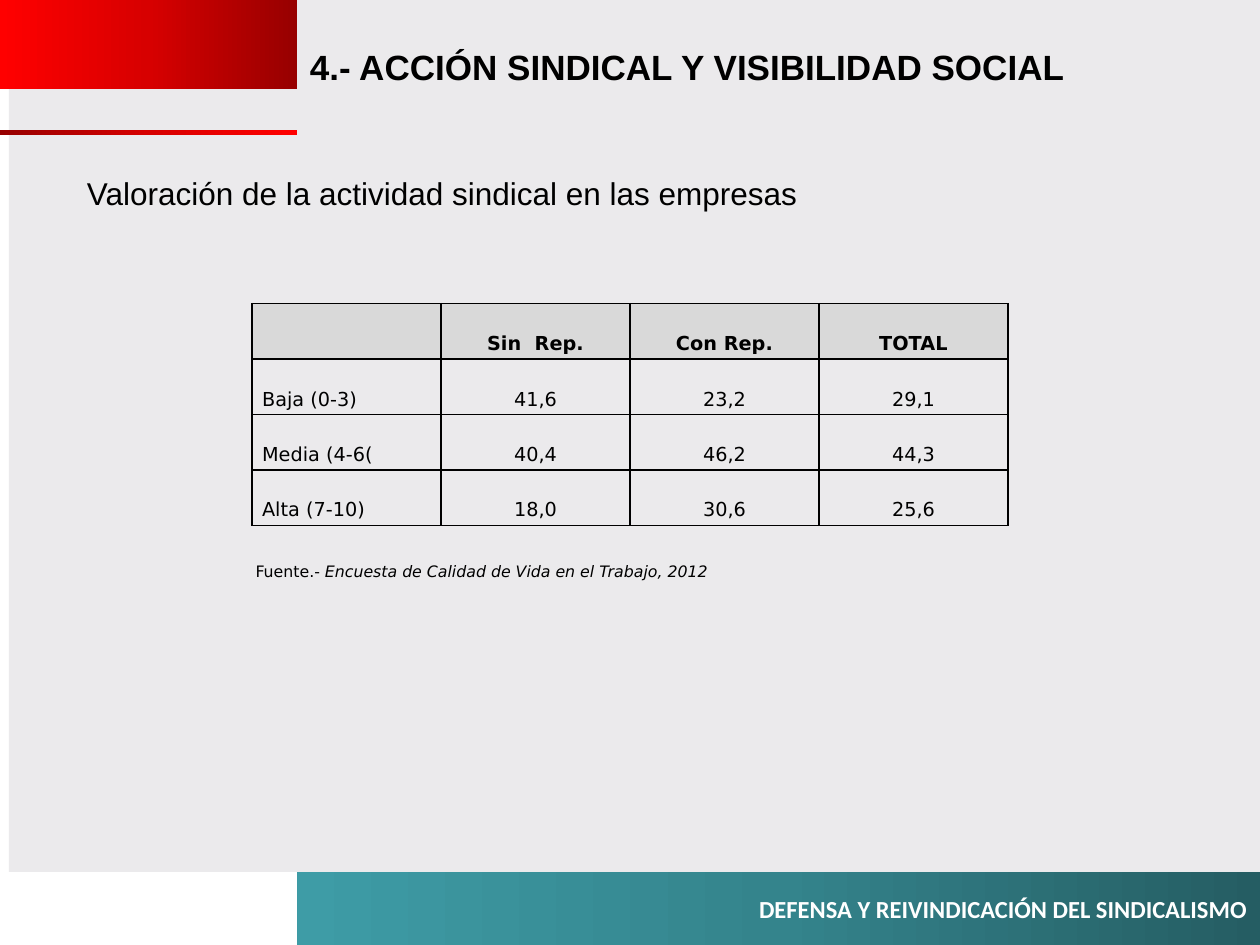
from copy import deepcopy

from lxml import etree
from pptx import Presentation
from pptx.dml.color import RGBColor
from pptx.enum import shapes, text
from pptx.oxml import ns
from pptx.util import Inches, Pt

BLACK = RGBColor(0x00, 0x00, 0x00)
WHITE = RGBColor(0xFF, 0xFF, 0xFF)
PANEL = RGBColor(0xEB, 0xEA, 0xEC)
HEADER = RGBColor(0xD9, 0xD9, 0xD9)
REDS = [RGBColor(0x97, 0x00, 0x00), RGBColor(0xD7, 0x00, 0x00), RGBColor(0xFF, 0x00, 0x00)]
TEALS = [RGBColor(0x25, 0x5D, 0x63), RGBColor(0x34, 0x84, 0x8C), RGBColor(0x3E, 0x9C, 0xA6)]

TITLE = "4.- ACCIÓN SINDICAL Y VISIBILIDAD SOCIAL"
SUBTITLE = "Valoración de la actividad sindical en las empresas"
FOOTER = "DEFENSA Y REIVINDICACIÓN DEL SINDICALISMO"
SOURCE = [("Fuente.- ", False), ("Encuesta de Calidad de Vida en el Trabajo, 2012", True)]
RATINGS = [
    ("", "Sin  Rep.", "Con Rep.", "TOTAL"),
    ("Baja (0-3)", "41,6", "23,2", "29,1"),
    ("Media (4-6(", "40,4", "46,2", "44,3"),
    ("Alta (7-10)", "18,0", "30,6", "25,6"),
]

SLIDE_WIDTH, SLIDE_HEIGHT = 10, 7.5
BAND_WIDTH = 2.36
FOOTER_TOP = 6.92
COLUMN_WIDTH, ROW_HEIGHT = 1.5, 0.44


def place(shape, left, top, width, height):
    shape.left, shape.top = Inches(left), Inches(top)
    shape.width, shape.height = Inches(width), Inches(height)


def style(font, name, size, color=BLACK, bold=False, italic=False):
    font.name, font.size, font.bold, font.italic = name, Pt(size), bold, italic
    font.color.rgb = color


def add_rectangle(slide, left, top, width, height):
    shape = slide.shapes.add_shape(
        shapes.MSO_SHAPE.RECTANGLE, Inches(left), Inches(top), Inches(width), Inches(height))
    shape.shadow.inherit = False
    shape.line.fill.background()
    return shape


def fill_gradient(shape, colors, angle):
    """Spread the colours evenly, adding the third stop to the default two."""
    shape.fill.gradient()
    shape.fill.gradient_angle = angle
    stop_list = shape.element.spPr.find(".//" + ns.qn("a:gsLst"))
    stop_list.append(deepcopy(stop_list[-1]))
    for index, (stop, color) in enumerate(zip(shape.fill.gradient_stops, colors)):
        stop.position = index / (len(colors) - 1)
        stop.color.rgb = color


def fill_placeholder(shape, words, size, bold=False):
    frame = shape.text_frame
    frame.text = words
    frame.word_wrap = True
    frame.auto_size = text.MSO_AUTO_SIZE.NONE
    frame.vertical_anchor = text.MSO_ANCHOR.TOP
    paragraph = frame.paragraphs[0]
    paragraph.alignment = text.PP_ALIGN.LEFT
    paragraph.space_before = Pt(0)
    style(paragraph.runs[0].font, "Arial", size, bold=bold)
    return paragraph


def add_borders(cell):
    properties = cell._tc.get_or_add_tcPr()
    for index, side in enumerate(("lnL", "lnR", "lnT", "lnB")):
        line = etree.Element(ns.qn(f"a:{side}"), w=str(Pt(1)))
        fill = etree.SubElement(line, ns.qn("a:solidFill"))
        etree.SubElement(fill, ns.qn("a:srgbClr"), val=str(BLACK))
        properties.insert(index, line)


def add_ratings(slide, left, top):
    rows, columns = len(RATINGS), len(RATINGS[0])
    table = slide.shapes.add_table(
        rows, columns, Inches(left), Inches(top),
        Inches(columns * COLUMN_WIDTH), Inches(rows * ROW_HEIGHT)).table
    table.horz_banding = False
    for row, values in enumerate(RATINGS):
        for column, value in enumerate(values):
            cell = table.cell(row, column)
            cell.text = value
            cell.vertical_anchor = text.MSO_ANCHOR.BOTTOM
            cell.margin_left = cell.margin_right = Inches(0.08)
            cell.margin_top, cell.margin_bottom = Inches(0), Inches(0.03)
            if row == 0:
                cell.fill.solid()
                cell.fill.fore_color.rgb = HEADER
            else:
                cell.fill.background()
            add_borders(cell)
            paragraph = cell.text_frame.paragraphs[0]
            paragraph.line_spacing = 1.15
            paragraph.alignment = text.PP_ALIGN.CENTER if column else text.PP_ALIGN.LEFT
            style(paragraph.font, "DejaVu Sans", 11, bold=row == 0)
            for run in paragraph.runs:
                style(run.font, "DejaVu Sans", 11, bold=row == 0)


def main():
    presentation = Presentation()
    presentation.slide_width = Inches(SLIDE_WIDTH)
    presentation.slide_height = Inches(SLIDE_HEIGHT)
    slide = presentation.slides.add_slide(presentation.slide_layouts[1])

    panel = add_rectangle(slide, 0.07, 0, SLIDE_WIDTH - 0.07, FOOTER_TOP)
    panel.fill.solid()
    panel.fill.fore_color.rgb = PANEL
    panel.element.getparent().insert(2, panel.element)  # behind the placeholders

    title = slide.shapes.title
    place(title, BAND_WIDTH, 0.31, 7.24, 0.44)
    fill_placeholder(title, TITLE, 20, bold=True)

    body = slide.placeholders[1]
    place(body, 0.59, 1.33, 8.84, 4.66)
    paragraph = fill_placeholder(body, SUBTITLE, 18)
    paragraph.alignment = text.PP_ALIGN.JUSTIFY
    properties = paragraph._p.get_or_add_pPr()
    properties.set("marL", str(Inches(0.29)))
    properties.set("indent", str(-Inches(0.29)))
    etree.SubElement(properties, ns.qn("a:buNone"))

    fill_gradient(add_rectangle(slide, 0, 0, BAND_WIDTH, 0.71), REDS, 180)
    fill_gradient(add_rectangle(slide, 0, 1.03, BAND_WIDTH, 0.04), REDS, 0)

    footer = add_rectangle(
        slide, BAND_WIDTH, FOOTER_TOP, SLIDE_WIDTH - BAND_WIDTH, SLIDE_HEIGHT - FOOTER_TOP)
    fill_gradient(footer, TEALS, 180)
    footer.text_frame.text = FOOTER
    footer.text_frame.vertical_anchor = text.MSO_ANCHOR.MIDDLE
    paragraph = footer.text_frame.paragraphs[0]
    paragraph.alignment = text.PP_ALIGN.RIGHT
    style(paragraph.runs[0].font, "Calibri", 14, WHITE, bold=True)

    add_ratings(slide, 2, 2.41)

    source = slide.shapes.add_textbox(Inches(1.93), Inches(4.41), Inches(8.07), Inches(0.55))
    source.text_frame.word_wrap = True
    for words, italic in SOURCE:
        run = source.text_frame.paragraphs[0].add_run()
        run.text = words
        style(run.font, "DejaVu Sans", 9, italic=italic)

    presentation.save("out.pptx")


if __name__ == "__main__":
    main()
